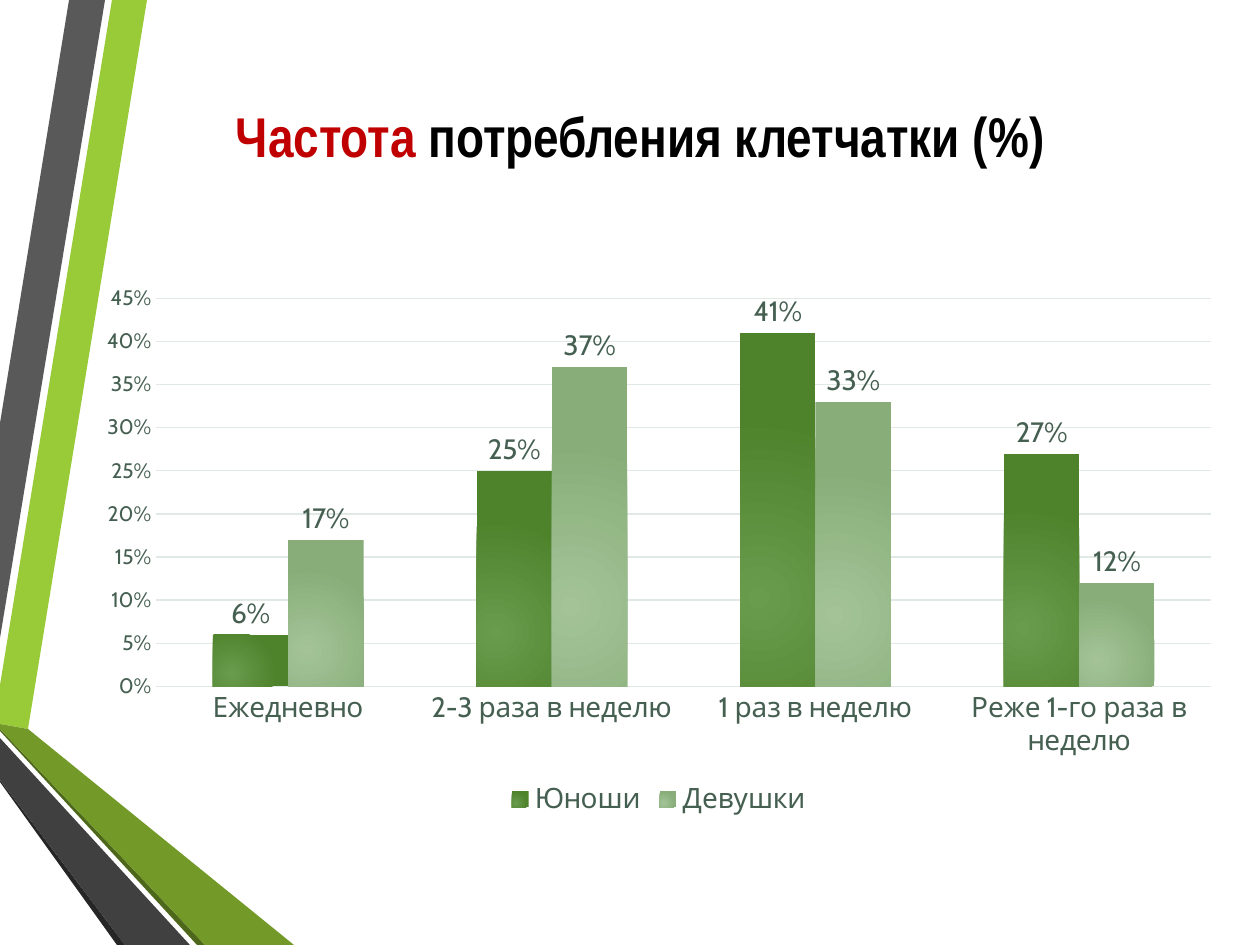
from pptx import Presentation, util as u
from pptx.chart.data import CategoryChartData
from pptx.dml.color import RGBColor
from pptx.enum import chart as ch, text as tx
from pptx.oxml import parse_xml
from pptx.oxml.ns import nsdecls

PX = 914400 / 126
INK, RULE = "455F51", "E1E9E5"
RIBBONS = [
    ("99CB38", [(0, 685), (0, 724), (28, 729), (147, 0), (112, 0)]),
    ("595959", [(105, 0), (69, 0), (0, 423), (0, 638)]),
    ("262626", [(0, 780), (0, 782), (117, 945), (125, 945)]),
    ("4D671B", [(0, 729), (0, 731), (197, 945), (205, 945)]),
    ("739A28", [(0, 729), (205, 945), (294, 945), (28, 729), (0, 724)]),
    ("404040", [(0, 780), (125, 945), (190, 945), (0, 738)]),
]
CATS = ["Ежедневно", "2-3 раза в неделю", "1 раз в неделю", "Реже 1-го раза в неделю"]
SERIES = [
    ("Юноши", [0.06, 0.25, 0.41, 0.27], "699C4D", "4E822B"),
    ("Девушки", [0.17, 0.37, 0.33, 0.12], "A4C498", "88AD79"),
]


def emu(*vals):
    return [u.Emu(round(v * PX)) for v in vals]


def rgb(code):
    return RGBColor.from_string(code)


def put(obj, **vals):
    """Set each named attribute of an object."""
    for key, val in vals.items():
        setattr(obj, key, val)


def style(font, size, color=INK, name="Cabin", bold=False):
    put(font, size=u.Pt(size), name=name, bold=bold)
    font.color.rgb = rgb(color)


def glow(ser, inner, outer):
    """Fill a series with a radial gradient."""
    stops = "".join(
        f'<a:gs pos="{pos}"><a:srgbClr val="{code}"/></a:gs>'
        for pos, code in ((0, inner), (100000, outer)))
    fill = parse_xml(
        f'<a:gradFill {nsdecls("a")} rotWithShape="1"><a:gsLst>{stops}</a:gsLst>'
        '<a:path path="circle"><a:fillToRect l="50000" t="100000" r="100000" b="50000"/>'
        '</a:path></a:gradFill>')
    ser.format.line.fill.background()
    ser._element.get_or_add_spPr().insert(0, fill)


def ribbons(slide, left, top):
    for color, pts in RIBBONS:
        pen = slide.shapes.build_freeform(*pts[0], scale=PX)
        pen.add_line_segments(pts[1:], close=True)
        shape = pen.convert_to_shape(*emu(left, top))
        shape.shadow.inherit = False
        shape.fill.solid()
        shape.fill.fore_color.rgb = rgb(color)
        shape.line.fill.background()


def title(slide, *box):
    frame = slide.shapes.add_textbox(*emu(*box)).text_frame
    put(frame, word_wrap=True, vertical_anchor=tx.MSO_ANCHOR.MIDDLE)
    para = frame.paragraphs[0]
    para.alignment = tx.PP_ALIGN.CENTER
    for words, color in (("Частота", "C00000"), (" потребления клетчатки (%)", "000000")):
        run = para.add_run()
        run.text = words
        style(run.font, 32, color, "Arial Narrow", True)


def rule(line):
    line.color.rgb = rgb(RULE)
    line.width = u.Pt(0.75)


def bars(slide, *box):
    data = CategoryChartData(number_format="0%")
    data.categories = CATS
    for name, vals, *_ in SERIES:
        data.add_series(name, vals)
    chart = slide.shapes.add_chart(
        ch.XL_CHART_TYPE.COLUMN_CLUSTERED, *emu(*box), data).chart
    style(chart.font, 10, "000000")
    put(chart, has_title=False, has_legend=True)
    put(chart.legend, position=ch.XL_LEGEND_POSITION.BOTTOM, include_in_layout=False)
    style(chart.legend.font, 16)

    cat, val = chart.category_axis, chart.value_axis
    for axis, size in ((cat, 16), (val, 12)):
        put(axis, major_tick_mark=ch.XL_TICK_MARK.NONE, minor_tick_mark=ch.XL_TICK_MARK.NONE)
        style(axis.tick_labels.font, size)
    rule(cat.format.line)
    put(val, minimum_scale=0, maximum_scale=0.45, major_unit=0.05, has_major_gridlines=True)
    val.format.line.fill.background()
    rule(val.major_gridlines.format.line)
    put(val.tick_labels, number_format="0%", number_format_is_linked=False)

    plot = chart.plots[0]
    put(plot, gap_width=150, overlap=0, vary_by_categories=False)
    for ser, (*_, inner, outer) in zip(plot.series, SERIES):
        ser.invert_if_negative = False
        glow(ser, inner, outer)
        labels = ser.data_labels
        put(labels, show_value=True, number_format="0%", number_format_is_linked=False,
            position=ch.XL_LABEL_POSITION.OUTSIDE_END)
        style(labels.font, 16)


def main():
    prs = Presentation()
    wide, high = emu(1260, 945)
    put(prs, slide_width=wide, slide_height=high)
    slide = prs.slides.add_slide(prs.slide_layouts[6])
    ribbons(slide, 0, 0)
    title(slide, 23, 66, 1235, 139)
    bars(slide, 84, 275, 1150, 546)
    prs.save("out.pptx")


if __name__ == "__main__":
    main()
